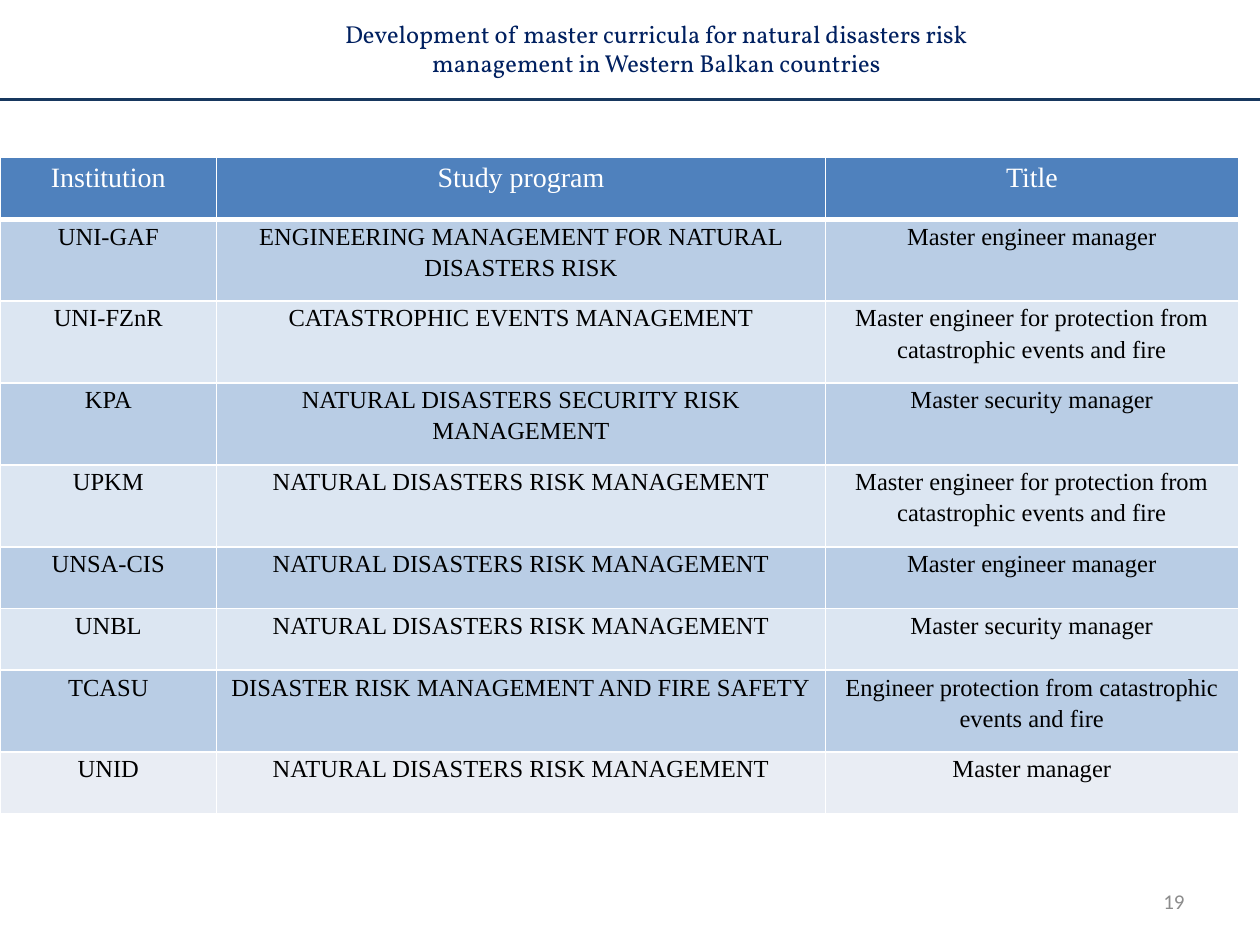
from lxml import etree
from pptx import Presentation
from pptx import util as u
from pptx.dml.color import RGBColor
from pptx.enum import shapes, text
from pptx.oxml import ns

WHITE = RGBColor(0xFF, 0xFF, 0xFF)
BLACK = RGBColor(0x00, 0x00, 0x00)
GREY = RGBColor(0x8C, 0x8C, 0x8C)
NAVY = RGBColor(0x00, 0x20, 0x60)
RULE_BLUE = RGBColor(0x17, 0x37, 0x5E)
HEADER_BLUE = RGBColor(0x4F, 0x81, 0xBD)
BAND_DARK = RGBColor(0xB9, 0xCD, 0xE5)
BAND_LIGHT = RGBColor(0xDC, 0xE6, 0xF2)
LAST_ROW = RGBColor(0xE9, 0xED, 0xF4)

TABLE_FONT = "Times New Roman"
COLUMN_WIDTHS = [1.72, 4.83, 3.28]
SHORT_ROW, TALL_ROW = 0.49, 0.65

COMMON_PROGRAM = "NATURAL DISASTERS RISK MANAGEMENT"
FIRE_ENGINEER = "Master engineer for protection from catastrophic events and fire"
HEADER = ("Institution", "Study program", "Title")
PROGRAMS = [
    ("UNI-GAF", "ENGINEERING MANAGEMENT FOR NATURAL DISASTERS RISK",
     "Master engineer manager", TALL_ROW),
    ("UNI-FZnR", "CATASTROPHIC EVENTS MANAGEMENT", FIRE_ENGINEER, TALL_ROW),
    ("KPA", "NATURAL DISASTERS SECURITY RISK MANAGEMENT",
     "Master security manager", TALL_ROW),
    ("UPKM", COMMON_PROGRAM, FIRE_ENGINEER, TALL_ROW),
    ("UNSA-CIS", COMMON_PROGRAM, "Master engineer manager", SHORT_ROW),
    ("UNBL", COMMON_PROGRAM, "Master security manager", SHORT_ROW),
    ("TCASU", "DISASTER RISK MANAGEMENT AND FIRE SAFETY",
     "Engineer protection from catastrophic events and fire", TALL_ROW),
    ("UNID", COMMON_PROGRAM, "Master manager", SHORT_ROW),
]


def write_text(frame, words, *, font, size, color,
               align=text.PP_ALIGN.CENTER, line_spacing=None):
    """Write one formatted paragraph into a text frame."""
    para = frame.paragraphs[0]
    para.alignment = align
    para.line_spacing = line_spacing
    span = para.add_run()
    span.text = words
    span.font.name = font
    span.font.size = u.Pt(size)
    span.font.color.rgb = color


def add_text_box(page, left, top, width, height, words, **style):
    """Add a wrapping text box with vertically centred text."""
    box = page.shapes.add_textbox(u.Inches(left), u.Inches(top),
                                  u.Inches(width), u.Inches(height))
    box.text_frame.word_wrap = True
    box.text_frame.vertical_anchor = text.MSO_ANCHOR.MIDDLE
    write_text(box.text_frame, words, **style)


def add_rule(page, top, color, weight):
    """Draw a horizontal line across the whole slide."""
    rule = page.shapes.add_connector(
        shapes.MSO_CONNECTOR.STRAIGHT,
        u.Inches(0), u.Inches(top), u.Inches(10), u.Inches(top))
    rule.line.color.rgb = color
    rule.line.width = u.Pt(weight)
    etree.SubElement(rule.element.spPr, ns.qn("a:effectLst"))


def set_borders(cell, color, bottom=1):
    """Give a cell thin borders with a chosen bottom weight."""
    properties = cell._tc.get_or_add_tcPr()
    for side, weight in (("L", 1), ("R", 1), ("T", 1), ("B", bottom)):
        border = etree.SubElement(properties, ns.qn(f"a:ln{side}"),
                                  w=str(u.Pt(weight)))
        fill = etree.SubElement(border, ns.qn("a:solidFill"))
        etree.SubElement(fill, ns.qn("a:srgbClr"), val=str(color))


def fill_row(table, index, words, height, fill, *, bottom=1, **style):
    """Write and format one table row."""
    table.rows[index].height = u.Inches(height)
    for cell, entry in zip(table.rows[index].cells, words):
        cell.margin_left = cell.margin_right = u.Inches(0.05)
        cell.margin_top = cell.margin_bottom = 0
        set_borders(cell, WHITE, bottom)
        cell.fill.solid()
        cell.fill.fore_color.rgb = fill
        write_text(cell.text_frame, entry, font=TABLE_FONT,
                   line_spacing=1.15, **style)


def add_program_table(page):
    """Add the table of institutions, study programs and titles."""
    height = SHORT_ROW + sum(row[-1] for row in PROGRAMS)
    table = page.shapes.add_table(
        len(PROGRAMS) + 1, len(HEADER), u.Inches(0), u.Inches(1.25),
        u.Inches(sum(COLUMN_WIDTHS)), u.Inches(height)).table
    for column, width in zip(table.columns, COLUMN_WIDTHS):
        column.width = u.Inches(width)
    fill_row(table, 0, HEADER, SHORT_ROW, HEADER_BLUE,
             bottom=3, size=16, color=WHITE)
    for index, (*words, row_height) in enumerate(PROGRAMS, start=1):
        band = BAND_DARK if index % 2 else BAND_LIGHT
        fill = LAST_ROW if index == len(PROGRAMS) else band
        fill_row(table, index, words, row_height, fill, size=14, color=BLACK)


def main():
    """Build and save the slide."""
    deck = Presentation()
    deck.slide_width, deck.slide_height = u.Inches(10), u.Inches(7.5)
    page = deck.slides.add_slide(deck.slide_layouts[6])
    add_text_box(page, 7.17, 6.95, 2.33, 0.4, "19", font="Calibri", size=12,
                 color=GREY, align=text.PP_ALIGN.RIGHT)
    add_rule(page, 0.79, RULE_BLUE, 2)
    add_text_box(page, 2.17, 0.17, 6.08, 0.42,
                 "Development of master curricula for natural disasters risk "
                 "management in Western Balkan countries",
                 font="Vollkorn", size=14, color=NAVY)
    add_program_table(page)
    deck.save("out.pptx")


if __name__ == "__main__":
    main()
